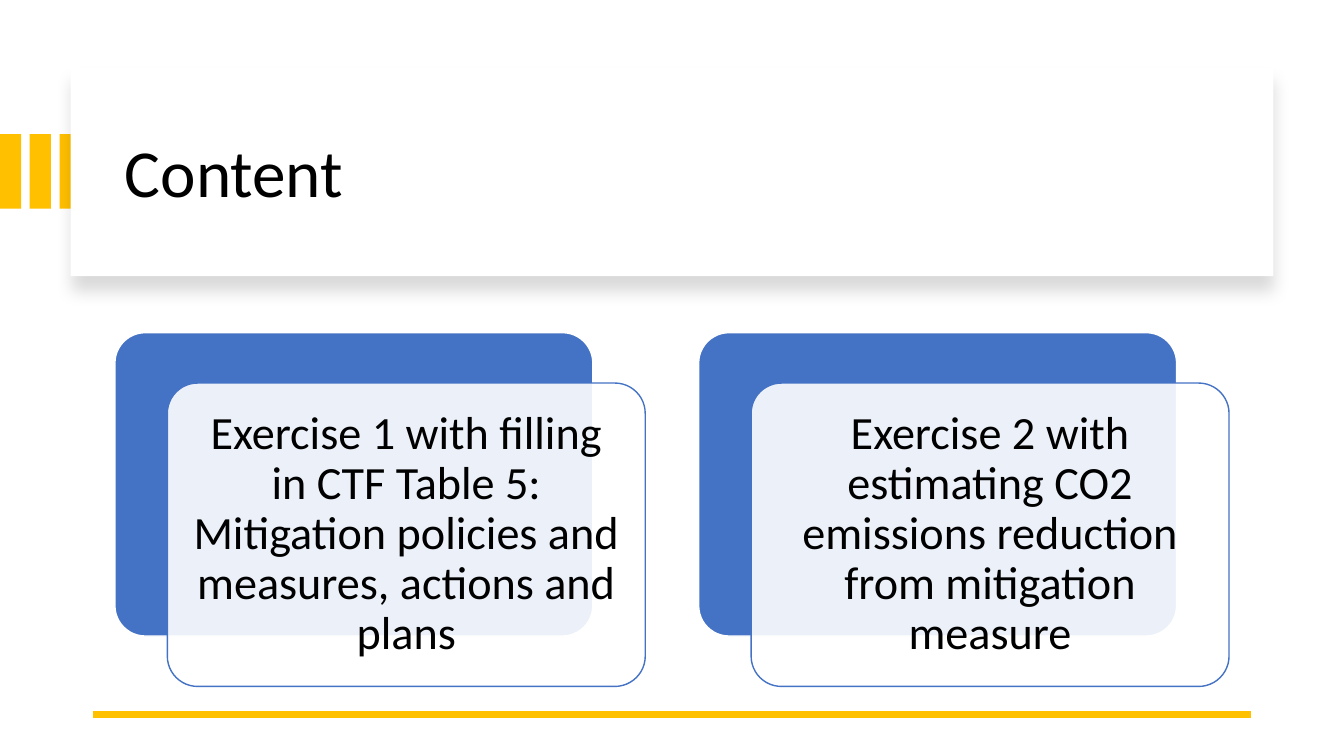
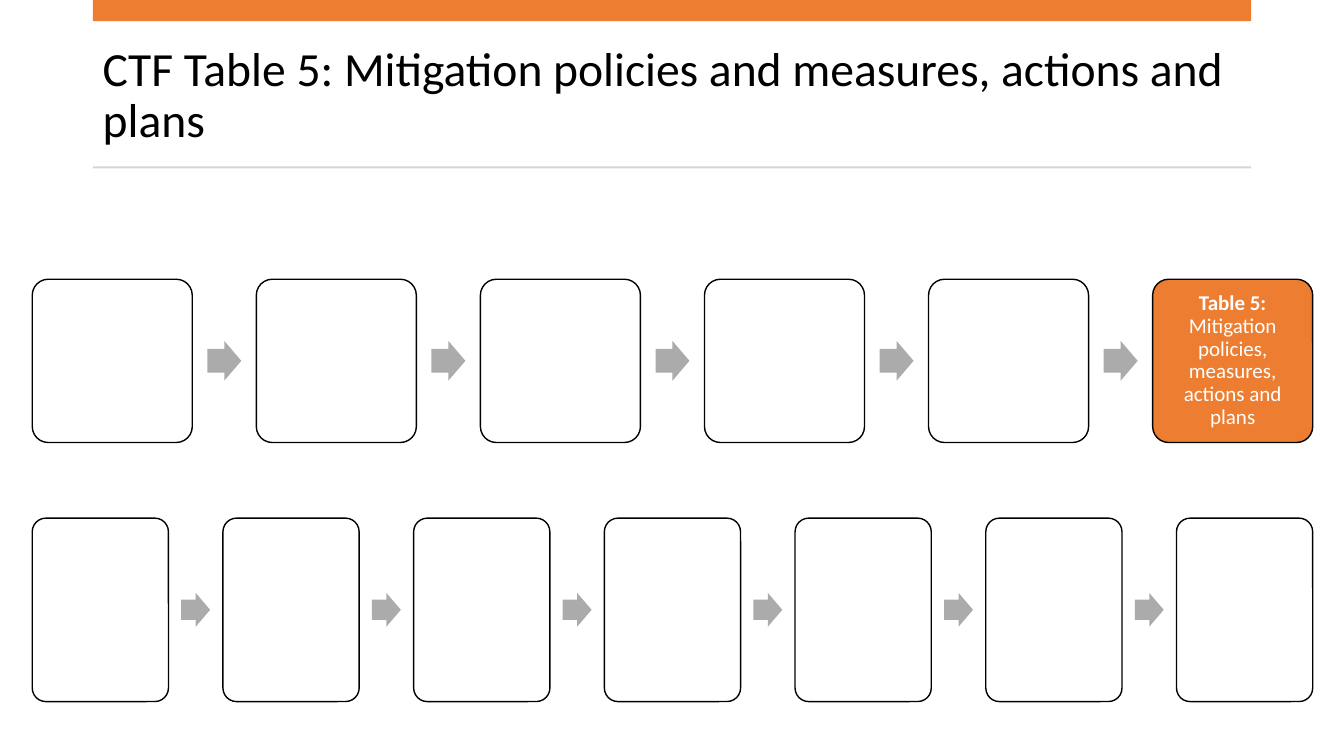
from lxml import etree
from pptx import Presentation
from pptx.dml.color import RGBColor
from pptx.enum.shapes import MSO_CONNECTOR, MSO_SHAPE
from pptx.enum.text import MSO_ANCHOR, PP_ALIGN
from pptx.oxml.ns import qn
from pptx.util import Inches, Pt

RECT = MSO_SHAPE.RECTANGLE
ROUNDED = MSO_SHAPE.ROUNDED_RECTANGLE
ARROW = MSO_SHAPE.RIGHT_ARROW
STRAIGHT = MSO_CONNECTOR.STRAIGHT
MIDDLE = MSO_ANCHOR.MIDDLE
LEFT, CENTER = PP_ALIGN.LEFT, PP_ALIGN.CENTER

WIDTH, HEIGHT = 13.33, 7.5
FONT = "Calibri"
COLORS = {
    "black": "000000",
    "white": "FFFFFF",
    "gold": "FFC000",
    "blue": "4472C4",
    "orange": "ED7D31",
    "rule": "D5D5D5",
    "arrow": "ABABAB",
}
CONTENT_LEFT, CONTENT_WIDTH = 0.92, 11.49
FLOW_LEFT, FLOW_WIDTH = 0.32, 12.7
GAP_SHARE = 0.4  # gap between steps, as a share of a step's width


def color(name):
    return RGBColor.from_string(COLORS[name])


def add_block(page, kind, left, top, width, height, fill, line=None, adjust=()):
    block = page.shapes.add_shape(
        kind, Inches(left), Inches(top), Inches(width), Inches(height))
    block.shadow.inherit = False
    block.fill.solid()
    block.fill.fore_color.rgb = color(fill)
    if line:
        block.line.color.rgb = color(line)
        block.line.width = Pt(1)
    else:
        block.line.fill.background()
    for index, value in enumerate(adjust):
        block.adjustments[index] = value
    return block


def set_opacity(block, percent):
    tint = block.fill._xPr.find(qn("a:solidFill"))[0]
    etree.SubElement(tint, qn("a:alpha"), val=str(percent * 1000))


def add_drop_shadow(block, opacity, blur, distance):
    effects = block._element.spPr.find(qn("a:effectLst"))
    shadow = etree.SubElement(
        effects, qn("a:outerShdw"), blurRad=str(Pt(blur)), dist=str(Pt(distance)),
        dir=str(90 * 60000), algn="t", rotWithShape="0")
    tint = etree.SubElement(shadow, qn("a:srgbClr"), val=COLORS["black"])
    etree.SubElement(tint, qn("a:alpha"), val=str(opacity * 1000))


def write(shape, spans, size, ink="black", align=CENTER, inset=None):
    """Fill a shape with one paragraph made of (text, bold) spans."""
    frame = shape.text_frame
    frame.word_wrap = True
    frame.vertical_anchor = MIDDLE
    if inset is not None:
        frame.margin_left = frame.margin_right = Inches(inset)
        frame.margin_top = frame.margin_bottom = Inches(inset)
    para = frame.paragraphs[0]
    para.alignment = align
    para.line_spacing = 0.9
    for text, bold in spans:
        span = para.add_run()
        span.text = text
        span.font.name = FONT
        span.font.size = Pt(size)
        span.font.bold = bold
        span.font.color.rgb = color(ink)


def add_title(page, text, left, top, width, height, size):
    box = page.shapes.add_textbox(
        Inches(left), Inches(top), Inches(width), Inches(height))
    write(box, [(text, False)], size, align=LEFT)


def add_rule(page, top, ink, weight):
    rule = page.shapes.add_connector(
        STRAIGHT, Inches(CONTENT_LEFT), Inches(top),
        Inches(CONTENT_LEFT + CONTENT_WIDTH), Inches(top))
    rule.line.color.rgb = color(ink)
    rule.line.width = Pt(weight)
    etree.SubElement(rule._element.spPr, qn("a:effectLst"))


def add_card(page, left, top, text):
    """Draw a solid panel with a translucent text panel offset over it."""
    width, height = 4.74, 3.01
    add_block(page, ROUNDED, left, top, width, height, "blue", "white", [0.1])
    front = add_block(page, ROUNDED, left + 0.52, top + 0.5, width, height,
                      "white", "blue", [0.1])
    set_opacity(front, 90)
    write(front, [(text, False)], 33, inset=0.14)


def add_flow(page, top, height, steps):
    """Draw a row of steps joined by arrows; a step is its spans or None."""
    count = len(steps)
    width = FLOW_WIDTH / (count + GAP_SHARE * (count - 1))
    gap = GAP_SHARE * width
    arrow_width, arrow_height = 0.212 * width, 0.248 * width
    for index, spans in enumerate(steps):
        left = FLOW_LEFT + index * (width + gap)
        if index:
            add_block(page, ARROW, left - (gap + arrow_width) / 2,
                      top + (height - arrow_height) / 2,
                      arrow_width, arrow_height, "arrow", adjust=[0.6, 0.5])
        step = add_block(page, ROUNDED, left, top, width, height,
                         "orange" if spans else "white", "black", [0.1])
        if spans:
            write(step, spans, 15, "white", inset=0.06)


def build_content(page):
    for index in range(3):
        add_block(page, RECT, index * 0.295, 1.33, 0.21, 0.74, "gold")
    banner = add_block(page, RECT, 0.7, 0.67, 11.93, 2.07, "white")
    add_drop_shadow(banner, opacity=15, blur=11, distance=10)
    add_title(page, "Content", 1.14, 0.89, 11.13, 1.7, 48)
    add_rule(page, 7.09, "gold", 4.5)
    exercises = [
        "Exercise 1 with filling in CTF Table 5: Mitigation policies and "
        "measures, actions and plans",
        "Exercise 2 with estimating CO2 emissions reduction from mitigation "
        "measure",
    ]
    for index, text in enumerate(exercises):
        add_card(page, 1.14 + index * 5.79, 3.3, text)


def build_table_flow(page):
    add_title(page, "CTF Table 5: Mitigation policies and measures, actions and plans",
              CONTENT_LEFT, 0.37, CONTENT_WIDTH, 1.18, 34)
    add_block(page, RECT, CONTENT_LEFT, 0, CONTENT_WIDTH, 0.21, "orange")
    add_block(page, RECT, CONTENT_LEFT, 1.65, CONTENT_WIDTH, 0.02, "rule")
    table_five = [("Table 5: ", True),
                  ("Mitigation policies, measures, actions and plans", False)]
    add_flow(page, 2.77, 1.62, [None] * 5 + [table_five])
    add_flow(page, 5.14, 1.82, [None] * 7)


def main():
    deck = Presentation()
    deck.slide_width, deck.slide_height = Inches(WIDTH), Inches(HEIGHT)
    blank = deck.slide_layouts[6]
    for build in (build_content, build_table_flow):
        build(deck.slides.add_slide(blank))
    deck.save("out.pptx")


if __name__ == "__main__":
    main()
